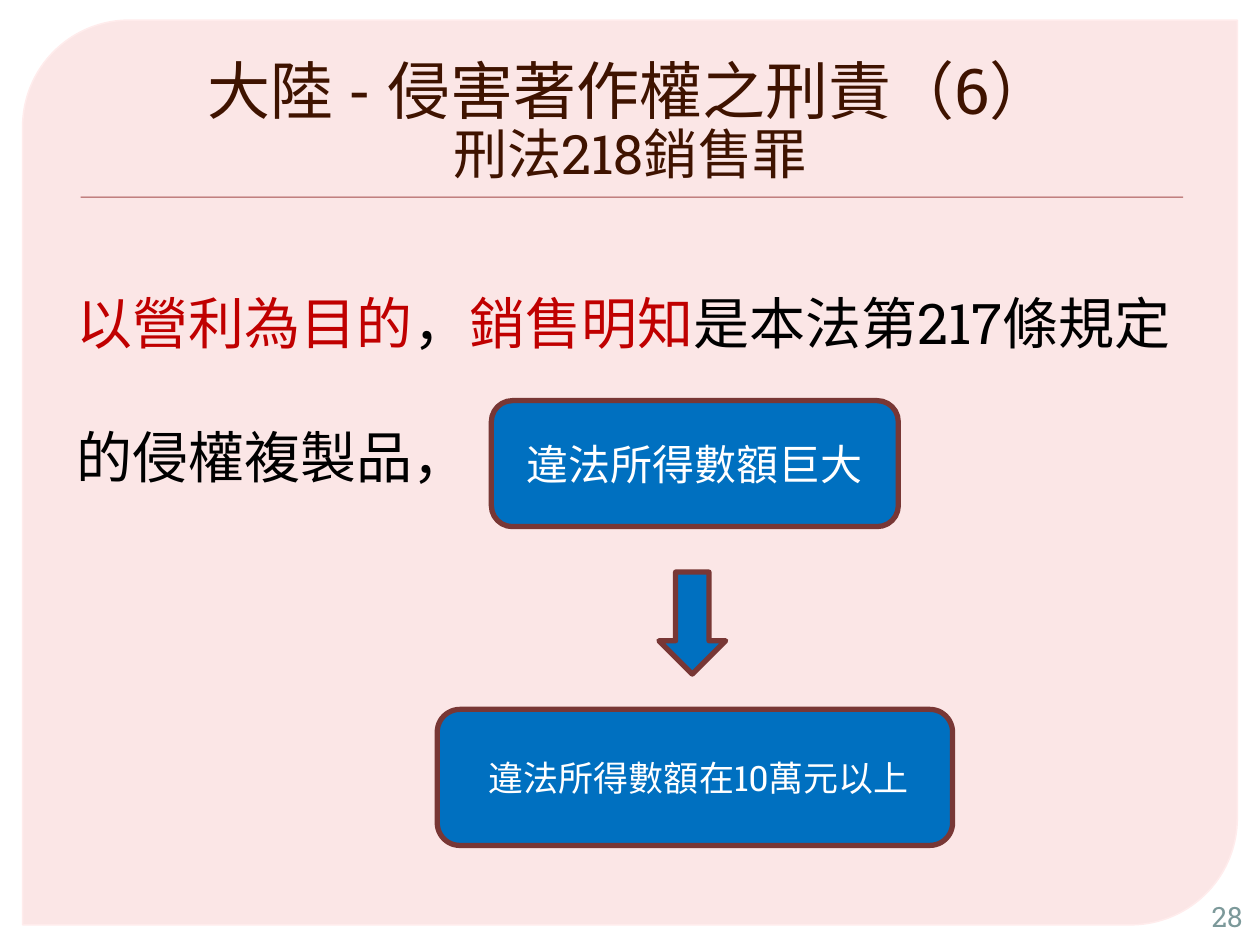
import pptx
import pptx.dml.color
import pptx.enum.shapes
import pptx.enum.text
import pptx.oxml
import pptx.oxml.ns
import pptx.util
from lxml import etree

Inches, Pt = pptx.util.Inches, pptx.util.Pt
SHAPE = pptx.enum.shapes.MSO_SHAPE
ALIGN = pptx.enum.text.PP_ALIGN
ANCHOR = pptx.enum.text.MSO_ANCHOR
FONT = "Roboto Slab"


def paint(item, color, size=None):
    """Colour a fill, a line or a font; a size also sets the typeface."""
    if hasattr(item, "solid"):
        item.solid()
        item = item.fore_color
    else:
        if size:
            item.name, item.size = FONT, Pt(size)
        item = item.color
    item.rgb = pptx.dml.color.RGBColor.from_string(color)


def add_block(kind, left, top, width, height, fill, border=None, weight=3):
    block = slide.shapes.add_shape(
        kind, Inches(left), Inches(top), Inches(width), Inches(height))
    block.shadow.inherit = False
    paint(block.fill, fill)
    if border:
        paint(block.line, border)
        block.line.width = Pt(weight)
    else:
        block.line.fill.background()
    return block


deck = pptx.Presentation()
deck.slide_width, deck.slide_height = Inches(10), Inches(7.5)
slide = deck.slides.add_slide(deck.slide_layouts[1])
title, body = slide.placeholders

# Background panel and title rule go behind the placeholders
panel = add_block(SHAPE.ROUND_2_DIAG_RECTANGLE, 0.18, 0.16, 9.64, 7.18,
                  "F9DADA", "FFECEC", 0.87)
panel.adjustments[0], panel.adjustments[1] = 0.118, 0
panel_color = panel.fill._xPr.find(".//" + pptx.oxml.ns.qn("a:srgbClr"))
etree.SubElement(panel_color, pptx.oxml.ns.qn("a:alpha"), val="65000")
rule = add_block(SHAPE.RECTANGLE, 0.64, 1.56, 8.75, 0.01, "A24A48")
for position, backdrop in enumerate((panel, rule), start=2):
    slide.shapes._spTree.insert(position, backdrop._element)

# Title
title.left, title.top = Inches(0.5), Inches(0.28)
title.width, title.height = Inches(9), Inches(1.25)
title.text_frame.text = "大陸 - 侵害著作權之刑責（6）\v刑法218銷售罪"
title.text_frame.auto_size = pptx.enum.text.MSO_AUTO_SIZE.NONE
title.text_frame.vertical_anchor = ANCHOR.BOTTOM
heading = title.text_frame.paragraphs[0]
heading.alignment = ALIGN.CENTER
heading.line_spacing = 0.9
for span, size in zip(heading.runs, (36, 31)):
    paint(span.font, "3F1300", size)

# Body
body.left, body.top = Inches(0.51), Inches(1.7)
body.width, body.height = Inches(9), Inches(5.2)
frame = body.text_frame
frame.auto_size = pptx.enum.text.MSO_AUTO_SIZE.NONE
frame.margin_top = Inches(0.58)
statement = [
    [("以營利為目的", "C00000"), ("，", "000000"), ("銷售明知", "C00000"),
     ("是本法第217條規定", "000000")],
    [("的侵權複製品，", "000000")],
]
for index, parts in enumerate(statement):
    para = frame.add_paragraph() if index else frame.paragraphs[0]
    para.line_spacing = Pt(39)
    para.space_before = Pt(37.5 if index else 0)
    properties = para._p.get_or_add_pPr()
    properties.set("marL", "0")
    properties.set("indent", "0")
    etree.SubElement(properties, pptx.oxml.ns.qn("a:buNone"))
    for words, color in parts:
        span = para.add_run()
        span.text = words
        paint(span.font, color, 32)

# Flow: large unlawful income, then its threshold
flow = [
    (SHAPE.ROUNDED_RECTANGLE, 3.9, 3.18, 3.23, 1, "違法所得數額巨大", 24),
    (SHAPE.DOWN_ARROW, 5.23, 4.54, 0.53, 0.81, "", 0),
    (SHAPE.ROUNDED_RECTANGLE, 3.47, 5.63, 4.09, 1.08,
     " 違法所得數額在10萬元以上", 20),
]
for kind, left, top, width, height, words, size in flow:
    box = add_block(kind, left, top, width, height, "0070C0", "783735")
    if words:
        box.text_frame.text = words
        box.text_frame.vertical_anchor = ANCHOR.MIDDLE
        para = box.text_frame.paragraphs[0]
        para.alignment = ALIGN.CENTER
        paint(para.runs[0].font, "FFFFFF", size)

# Page number
number = slide.shapes.add_textbox(
    Inches(9.45), Inches(7.12), Inches(0.51), Inches(0.3))
number.text_frame.word_wrap = True
number.text_frame.vertical_anchor = ANCHOR.MIDDLE
number.text_frame.text = "28"
para = number.text_frame.paragraphs[0]
para.alignment = ALIGN.RIGHT
paint(para.runs[0].font, "7C999A", 16)

deck.save("out.pptx")
